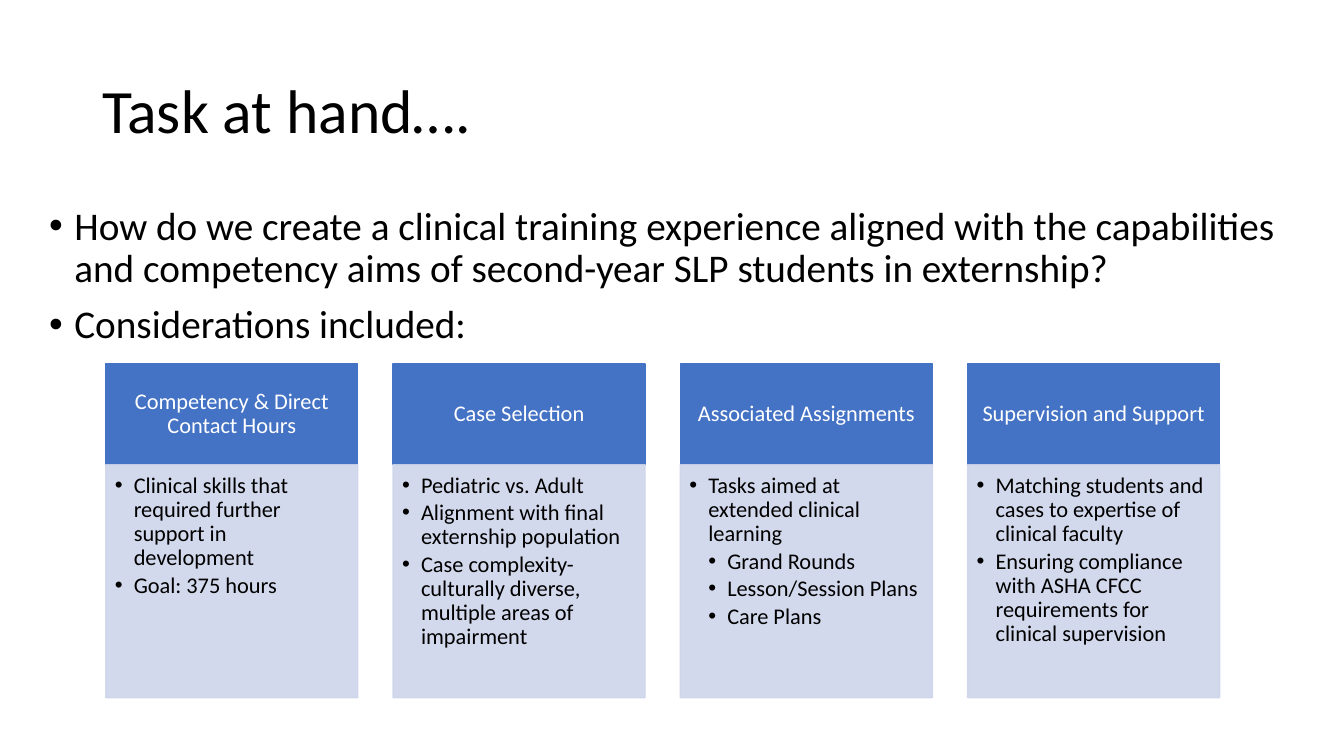
from dataclasses import dataclass

from pptx import Presentation
from pptx.dml.color import RGBColor
from pptx.enum.shapes import MSO_SHAPE
from pptx.enum.text import MSO_ANCHOR, PP_ALIGN
from pptx.oxml.ns import qn
from pptx.util import Pt
from lxml import etree

RECT = MSO_SHAPE.RECTANGLE
TOP, MIDDLE = MSO_ANCHOR.TOP, MSO_ANCHOR.MIDDLE
LEFT, CENTER = PP_ALIGN.LEFT, PP_ALIGN.CENTER


@dataclass(frozen=True)
class Theme:
    face: str = "Calibri"
    ink: RGBColor = RGBColor(0, 0, 0)
    white: RGBColor = RGBColor(255, 255, 255)
    blue: RGBColor = RGBColor(0x44, 0x72, 0xC4)
    pale: RGBColor = RGBColor(0xCF, 0xD5, 0xEA)
    title: int = 44
    body: int = 28
    card: int = 16


theme = Theme()


def write(shape, items, size, color, pads, anchor=TOP, align=LEFT,
          before=0, after=0, step=0):
    """Fill a shape with (level, text) items; a step above 0 adds bullets."""
    frame = shape.text_frame
    frame.word_wrap = True
    frame.vertical_anchor = anchor
    (frame.margin_left, frame.margin_top,
     frame.margin_right, frame.margin_bottom) = map(Pt, pads)
    for i, (level, text) in enumerate(items):
        para = frame.add_paragraph() if i else frame.paragraphs[0]
        para.text = text
        para.alignment = align
        para.line_spacing = 0.9
        para.space_before, para.space_after = Pt(before), Pt(after)
        if step:
            para.level = level
            props = para._p.get_or_add_pPr()
            props.set("marL", str(Pt(step * (level + 1))))
            props.set("indent", str(Pt(-step)))
            etree.SubElement(props, qn("a:buFont")).set("typeface", "Arial")
            etree.SubElement(props, qn("a:buChar")).set("char", "•")
        font = para.font
        font.name, font.size = theme.face, Pt(size)
        font.color.rgb = color


def panel(x, y, w, h, color, alpha=100):
    """Add a flat rectangle with fill and outline in one colour."""
    box = slide.shapes.add_shape(RECT, Pt(x), Pt(y), Pt(w), Pt(h))
    box.shadow.inherit = False
    box.fill.solid()
    box.fill.fore_color.rgb = color
    box.line.color.rgb = color
    box.line.width = Pt(1)
    if alpha < 100:
        for tint in box._element.spPr.iter(qn("a:srgbClr")):
            etree.SubElement(tint, qn("a:alpha")).set("val", str(alpha * 1000))
    return box


deck = Presentation()
deck.slide_width, deck.slide_height = Pt(960), Pt(540)
slide = deck.slides.add_slide(deck.slide_layouts[6])

# Title
title = slide.shapes.add_textbox(Pt(66), Pt(28.75), Pt(828), Pt(104.4))
write(title, [(0, "Task at hand….")], theme.title, theme.ink,
      (7.2, 3.6, 7.2, 3.6), MIDDLE)

# Opening question
points = [
    (0, "How do we create a clinical training experience aligned with the "
        "capabilities and competency aims of second-year SLP students in "
        "externship?"),
    (0, "Considerations included:"),
]
body = slide.shapes.add_textbox(Pt(28.1), Pt(143.75), Pt(911.5), Pt(367))
write(body, points, theme.body, theme.ink, (7.2, 3.6, 7.2, 3.6),
      before=10, step=18)

# Four considerations, each a heading over a list of (level, text)
cards = [
    ("Competency & Direct Contact Hours", [
        (0, "Clinical skills that required further support in development"),
        (0, "Goal: 375 hours")]),
    ("Case Selection", [
        (0, "Pediatric vs. Adult"),
        (0, "Alignment with final externship population"),
        (0, "Case complexity- culturally diverse, multiple areas of "
            "impairment")]),
    ("Associated Assignments", [
        (0, "Tasks aimed at extended clinical learning"),
        (1, "Grand Rounds"),
        (1, "Lesson/Session Plans"),
        (1, "Care Plans")]),
    ("Supervision and Support", [
        (0, "Matching students and cases to expertise of clinical faculty"),
        (0, "Ensuring compliance with ASHA CFCC requirements for clinical "
            "supervision")]),
]
start, pitch, width = 75.6, 205.2, 180
top, head_h, list_h = 260, 72, 166.4

for col, (name, items) in enumerate(cards):
    x = start + col * pitch
    head = panel(x, top, width, head_h, theme.blue)
    write(head, [(0, name)], theme.card, theme.white, (8.6, 5, 8.6, 5),
          MIDDLE, CENTER)
    area = panel(x, top + head_h, width, list_h, theme.pale, 90)
    write(area, items, theme.card, theme.ink, (6.5, 6.5, 8.6, 10),
          after=2.4, step=13.5)

deck.save("out.pptx")
